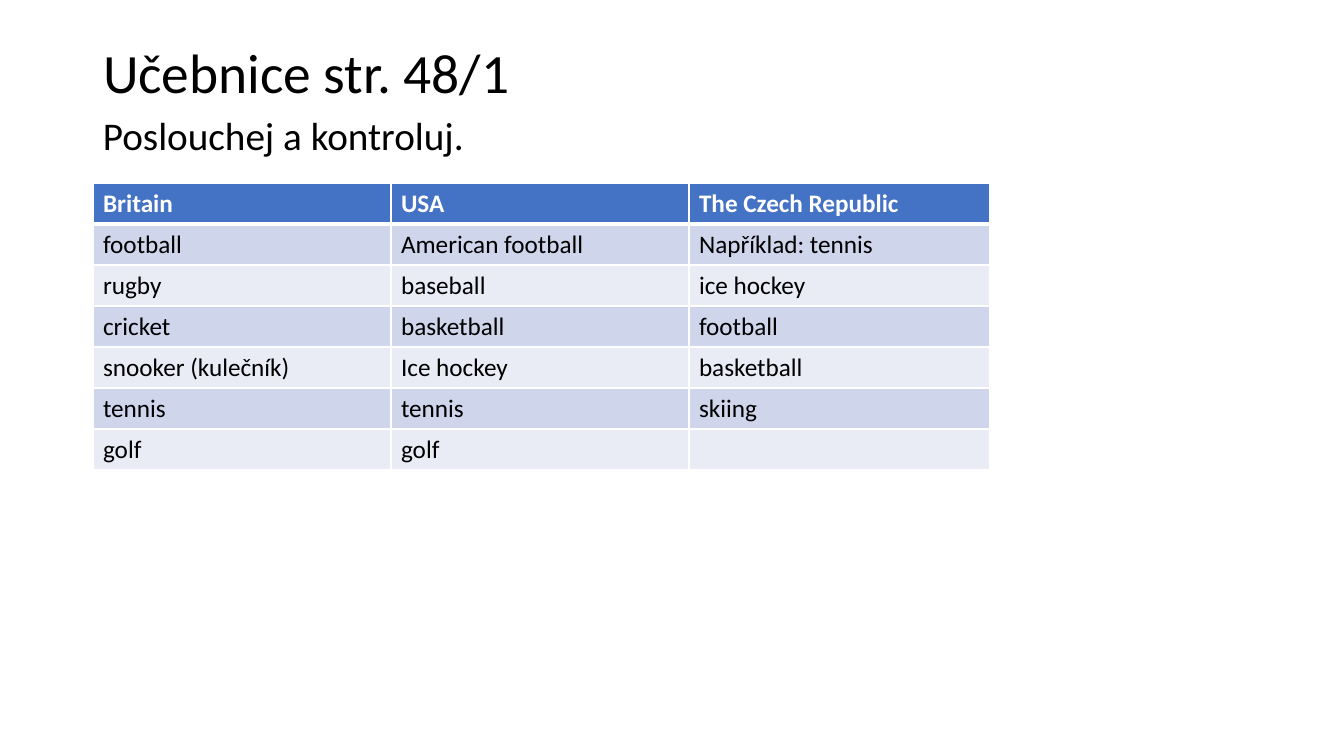
from dataclasses import dataclass

from lxml import etree
from pptx import Presentation
from pptx.dml.color import RGBColor
from pptx.enum.text import MSO_ANCHOR, MSO_AUTO_SIZE, PP_ALIGN
from pptx.oxml.ns import qn
from pptx.util import Pt

EMU_PER_INCH = 914400
PX_PER_INCH = 100.8
TITLE_ONLY = 5
FONT = "Calibri"
LEFT = PP_ALIGN.LEFT
TOP = MSO_ANCHOR.TOP
MIDDLE = MSO_ANCHOR.MIDDLE
NO_AUTOFIT = MSO_AUTO_SIZE.NONE

BLACK = RGBColor(0x00, 0x00, 0x00)
WHITE = RGBColor(0xFF, 0xFF, 0xFF)
HEADER_BLUE = RGBColor(0x44, 0x72, 0xC4)
DARK_BAND = RGBColor(0xCF, 0xD5, 0xEA)
LIGHT_BAND = RGBColor(0xE9, 0xEB, 0xF5)

COLUMN_WIDTHS = (298, 298, 301)
ROW_HEIGHT = 41
SPORTS = (
    ("Britain", "USA", "The Czech Republic"),
    ("football", "American football", "Například: tennis"),
    ("rugby", "baseball", "ice hockey"),
    ("cricket", "basketball", "football"),
    ("snooker (kulečník)", "Ice hockey", "basketball"),
    ("tennis", "tennis", "skiing"),
    ("golf", "golf", ""),
)


@dataclass(frozen=True)
class Heading:
    text: str
    top: int
    height: int
    size: float
    anchor: MSO_ANCHOR
    left: int = 93
    width: int = 1159


TITLE = Heading("Učebnice str. 48/1", 40, 72, 39.6, MIDDLE)
TASK = Heading("Poslouchej a kontroluj.", 112, 569, 28, TOP)


def px(length: int) -> int:
    return round(length * EMU_PER_INCH / PX_PER_INCH)


def add_run(paragraph, text: str, size: float, color: RGBColor,
            bold: bool = False) -> None:
    run = paragraph.add_run()
    run.text = text
    run.font.name = FONT
    run.font.size = Pt(size)
    run.font.bold = bold
    run.font.color.rgb = color


def write_heading(shape, heading: Heading) -> None:
    shape.left, shape.top = px(heading.left), px(heading.top)
    shape.width, shape.height = px(heading.width), px(heading.height)
    frame = shape.text_frame
    frame.word_wrap = True
    frame.auto_size = NO_AUTOFIT
    frame.vertical_anchor = heading.anchor
    paragraph = frame.paragraphs[0]
    paragraph.alignment = LEFT
    paragraph.line_spacing = 0.9
    add_run(paragraph, heading.text, heading.size, BLACK)


def set_borders(cell, top: int, bottom: int) -> None:
    """Draw white borders; top and bottom widths are in points."""
    properties = cell._tc.get_or_add_tcPr()
    widths = {"a:lnL": 1, "a:lnR": 1, "a:lnT": top, "a:lnB": bottom}
    for position, (tag, width) in enumerate(widths.items()):
        line = etree.Element(qn(tag), w=str(Pt(width)))
        fill = etree.SubElement(line, qn("a:solidFill"))
        etree.SubElement(fill, qn("a:srgbClr"), val=str(WHITE))
        properties.insert(position, line)


def add_sports_table(slide, left: int, top: int) -> None:
    table = slide.shapes.add_table(
        len(SPORTS), len(COLUMN_WIDTHS), px(left), px(top),
        px(sum(COLUMN_WIDTHS)), px(ROW_HEIGHT * len(SPORTS))).table
    for column, width in zip(table.columns, COLUMN_WIDTHS):
        column.width = px(width)
    for row_index, sports in enumerate(SPORTS):
        table.rows[row_index].height = px(ROW_HEIGHT)
        is_header = row_index == 0
        band = DARK_BAND if row_index % 2 else LIGHT_BAND
        for cell, sport in zip(table.rows[row_index].cells, sports):
            cell.fill.solid()
            cell.fill.fore_color.rgb = HEADER_BLUE if is_header else band
            set_borders(cell, top=3 if row_index == 1 else 1,
                        bottom=3 if is_header else 1)
            if sport:
                add_run(cell.text_frame.paragraphs[0], sport, 18,
                        WHITE if is_header else BLACK, is_header)


def main() -> None:
    presentation = Presentation()
    presentation.slide_width = px(1344)
    presentation.slide_height = px(756)
    slide = presentation.slides.add_slide(
        presentation.slide_layouts[TITLE_ONLY])
    write_heading(slide.shapes.title, TITLE)
    write_heading(slide.shapes.add_textbox(0, 0, 0, 0), TASK)
    add_sports_table(slide, left=93, top=183)
    presentation.save("out.pptx")


if __name__ == "__main__":
    main()
